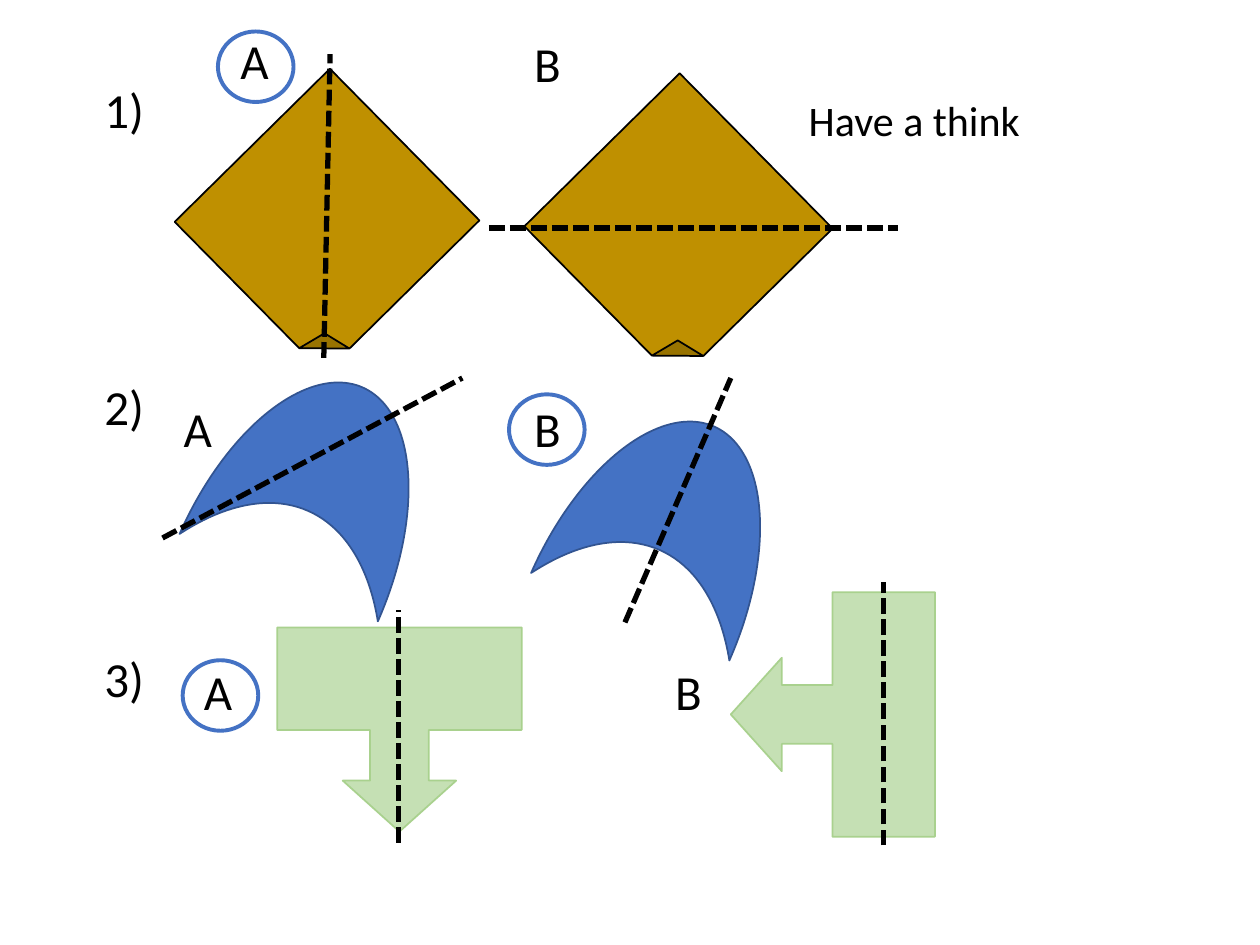
from pptx import Presentation
from pptx.dml.color import RGBColor
from pptx.enum import dml, shapes, text
from pptx.oxml.ns import qn
from pptx.util import Inches, Pt

COLORS = {
    "ink": "000000", "gold": "BF9000", "blue": "4472C4",
    "navy": "325491", "mint": "C5E0B4", "leaf": "A9D18E",
}
SHAPE = shapes.MSO_SHAPE
STYLES = {
    "kite": (SHAPE.FOLDED_CORNER, 45.4, (), "gold", "ink"),
    "moon": (SHAPE.MOON, 113.8, (0.649,), "blue", "navy"),
    "down": (SHAPE.UP_ARROW_CALLOUT, 180, (0.288, 0.278, 0.25, 0.502), "mint", "leaf"),
    "left": (SHAPE.UP_ARROW_CALLOUT, 270, (0.288, 0.278, 0.25, 0.502), "mint", "leaf"),
}
QUESTIONS = [
    ("1)", 0.58, [
        ("A", (1.81, 0.19), "kite", (1.75, 0.89, 1.69, 1.73), (2.57, 2.84, 2.62, 0.43), (1.73, 0.25)),
        ("B", (4.14, 0.22), "kite", (4.52, 0.94, 1.73, 1.73), (3.88, 1.81, 7.13, 1.81), None),
    ]),
    ("2)", 2.94, [
        ("A", (1.36, 3.11), "moon", (1.72, 2.97, 1.65, 1.72), (1.29, 4.27, 3.67, 3), None),
        ("B", (4.14, 3.11), "moon", (4.51, 3.28, 1.65, 1.72), (4.96, 4.94, 5.8, 3), (4.04, 3.13)),
    ]),
    ("3)", 5.1, [
        ("A", (1.52, 5.2), "down", (2.2, 4.98, 1.94, 1.62), (3.16, 6.69, 3.16, 4.84), (1.45, 5.24)),
        ("B", (5.26, 5.2), "left", (5.64, 4.86, 1.94, 1.62), (7.01, 6.71, 7.01, 4.62), None),
    ]),
]


def rgb(name):
    """Return the named colour."""
    return RGBColor.from_string(COLORS[name])


def add_label(s, box, words, size=28, wrap=False):
    """Place one line of text in the box."""
    tb = s.shapes.add_textbox(*map(Inches, box))
    tf = tb.text_frame
    tf.word_wrap = wrap
    tf.auto_size = text.MSO_AUTO_SIZE.SHAPE_TO_FIT_TEXT
    r = tf.paragraphs[0].add_run()
    r.text = words
    r.font.name = "Calibri"
    r.font.size = Pt(size)
    r.font.color.rgb = rgb("ink")


def add_figure(s, box, style):
    """Place a rotated figure of the given style in the box."""
    kind, angle, adjustments, fill, line = STYLES[style]
    sp = s.shapes.add_shape(kind, *map(Inches, box))
    sp.shadow.inherit = False
    sp.rotation = angle
    for i, value in enumerate(adjustments):
        sp.adjustments[i] = value
    sp.fill.solid()
    sp.fill.fore_color.rgb = rgb(fill)
    sp.line.color.rgb = rgb(line)
    sp.line.width = Pt(1)


def add_axis(s, ends):
    """Draw a dashed candidate line of symmetry."""
    cx = s.shapes.add_connector(shapes.MSO_CONNECTOR.STRAIGHT, *map(Inches, ends))
    cx.line.color.rgb = rgb("ink")
    cx.line.width = Pt(3)
    cx.line.dash_style = dml.MSO_LINE.SQUARE_DOT
    props = cx._element.spPr
    props.append(props.makeelement(qn("a:effectLst"), {}))


def add_ring(s, corner):
    """Circle the correct answer."""
    sp = s.shapes.add_shape(SHAPE.OVAL, *map(Inches, (*corner, 0.6, 0.56)))
    sp.shadow.inherit = False
    sp.fill.background()
    sp.line.color.rgb = rgb("blue")
    sp.line.width = Pt(2.25)


def add_question(s, number, top, options):
    """Place a numbered question with its lettered options."""
    add_label(s, (0.73, top, 0.52, 0.57), number)
    for letter, corner, style, box, axis, ring in options:
        add_figure(s, box, style)
        add_label(s, (*corner, 0.43, 0.57), letter)
        add_axis(s, axis)
        if ring:
            add_ring(s, ring)


def main():
    """Build the symmetry slide."""
    prs = Presentation()
    prs.slide_width, prs.slide_height = Inches(10), Inches(7.5)
    s = prs.slides.add_slide(prs.slide_layouts[6])
    for question in QUESTIONS:
        add_question(s, *question)
    add_label(s, (6.32, 0.7, 2.29, 0.5), "Have a think", 24, True)
    prs.save("out.pptx")


if __name__ == "__main__":
    main()
